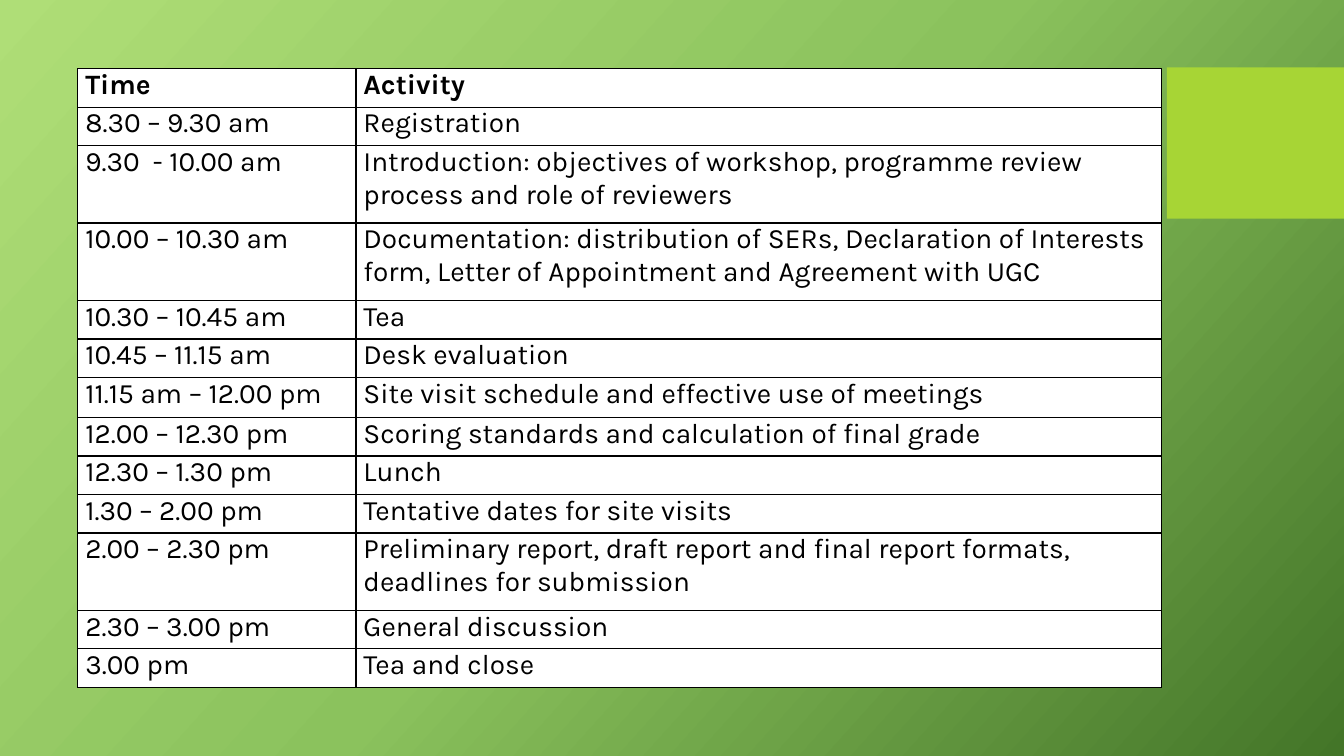
from copy import deepcopy

from pptx import Presentation
from pptx.dml.color import RGBColor
from pptx.enum.shapes import MSO_SHAPE
from pptx.oxml import parse_xml
from pptx.oxml.ns import nsdecls
from pptx.util import Cm, Pt

FONT = "Karla"
BACKGROUND_STOPS = [(0, "AFDE77"), (0.5, "8BC25D"), (1, "437528")]
COLUMN_WIDTHS = [7.01, 20.3]
ROW_HEIGHT = 0.97
SCHEDULE = [
    ("Time", "Activity", ROW_HEIGHT),
    ("8.30 – 9.30 am", "Registration", ROW_HEIGHT),
    ("9.30  - 10.00 am",
     "Introduction: objectives of workshop, programme review process and role of reviewers", 1.95),
    ("10.00 – 10.30 am",
     "Documentation: distribution of SERs, Declaration of Interests form, "
     "Letter of Appointment and Agreement with UGC", 1.95),
    ("10.30 – 10.45 am", "Tea", ROW_HEIGHT),
    ("10.45 – 11.15 am", "Desk evaluation", ROW_HEIGHT),
    ("11.15 am – 12.00 pm", "Site visit schedule and effective use of meetings", 1.01),
    ("12.00 – 12.30 pm", "Scoring standards and calculation of final grade", ROW_HEIGHT),
    ("12.30 – 1.30 pm", "Lunch", ROW_HEIGHT),
    ("1.30 – 2.00 pm", "Tentative dates for site visits", ROW_HEIGHT),
    ("2.00 – 2.30 pm",
     "Preliminary report, draft report and final report formats, deadlines for submission", 1.95),
    ("2.30 – 3.00 pm", "General discussion", ROW_HEIGHT),
    ("3.00 pm", "Tea and close", ROW_HEIGHT),
]


def color(value):
    return RGBColor.from_string(value)


def set_background(slide):
    fill = slide.background.fill
    fill.gradient()
    fill.gradient_angle = 318
    first_stop = fill.gradient_stops[0]._gs
    first_stop.addnext(deepcopy(first_stop))
    for stop, (position, value) in zip(fill.gradient_stops, BACKGROUND_STOPS):
        stop.position = position
        stop.color.rgb = color(value)


def add_accent_block(slide):
    shape = slide.shapes.add_shape(MSO_SHAPE.RECTANGLE, Cm(29.41), Cm(1.7), Cm(4.46), Cm(3.81))
    shape.shadow.inherit = False
    shape.fill.solid()
    shape.fill.fore_color.rgb = color("A7D535")
    shape.line.fill.background()


def add_borders(cell, value):
    properties = cell._tc.get_or_add_tcPr()
    for side in ("lnL", "lnR", "lnT", "lnB"):
        properties.append(parse_xml(
            f'<a:{side} {nsdecls("a")} w="{Pt(1)}"><a:solidFill>'
            f'<a:srgbClr val="{value}"/></a:solidFill></a:{side}>'))


def fill_cell(cell, text, bold):
    add_borders(cell, "000000")
    cell.fill.solid()
    cell.fill.fore_color.rgb = color("FFFFFF")
    cell.margin_left = cell.margin_right = Cm(0.19)
    cell.margin_top = cell.margin_bottom = 0
    run = cell.text_frame.paragraphs[0].add_run()
    run.text = text
    run.font.name = FONT
    run.font.size = Pt(20)
    run.font.bold = bold
    run.font.color.rgb = color("000000")


def add_schedule(slide):
    width = sum(COLUMN_WIDTHS)
    height = sum(row_height for _, _, row_height in SCHEDULE)
    table = slide.shapes.add_table(
        len(SCHEDULE), len(COLUMN_WIDTHS), Cm(1.96), Cm(1.73), Cm(width), Cm(height)).table
    table.horz_banding = False
    for column, column_width in zip(table.columns, COLUMN_WIDTHS):
        column.width = Cm(column_width)
    for index, (time, activity, row_height) in enumerate(SCHEDULE):
        row = table.rows[index]
        row.height = Cm(row_height)
        for cell, text in zip(row.cells, (time, activity)):
            fill_cell(cell, text, bold=index == 0)


def main():
    presentation = Presentation()
    presentation.slide_width = Cm(33.87)
    presentation.slide_height = Cm(19.05)
    slide = presentation.slides.add_slide(presentation.slide_layouts[6])
    set_background(slide)
    add_accent_block(slide)
    add_schedule(slide)
    presentation.save("out.pptx")


if __name__ == "__main__":
    main()
